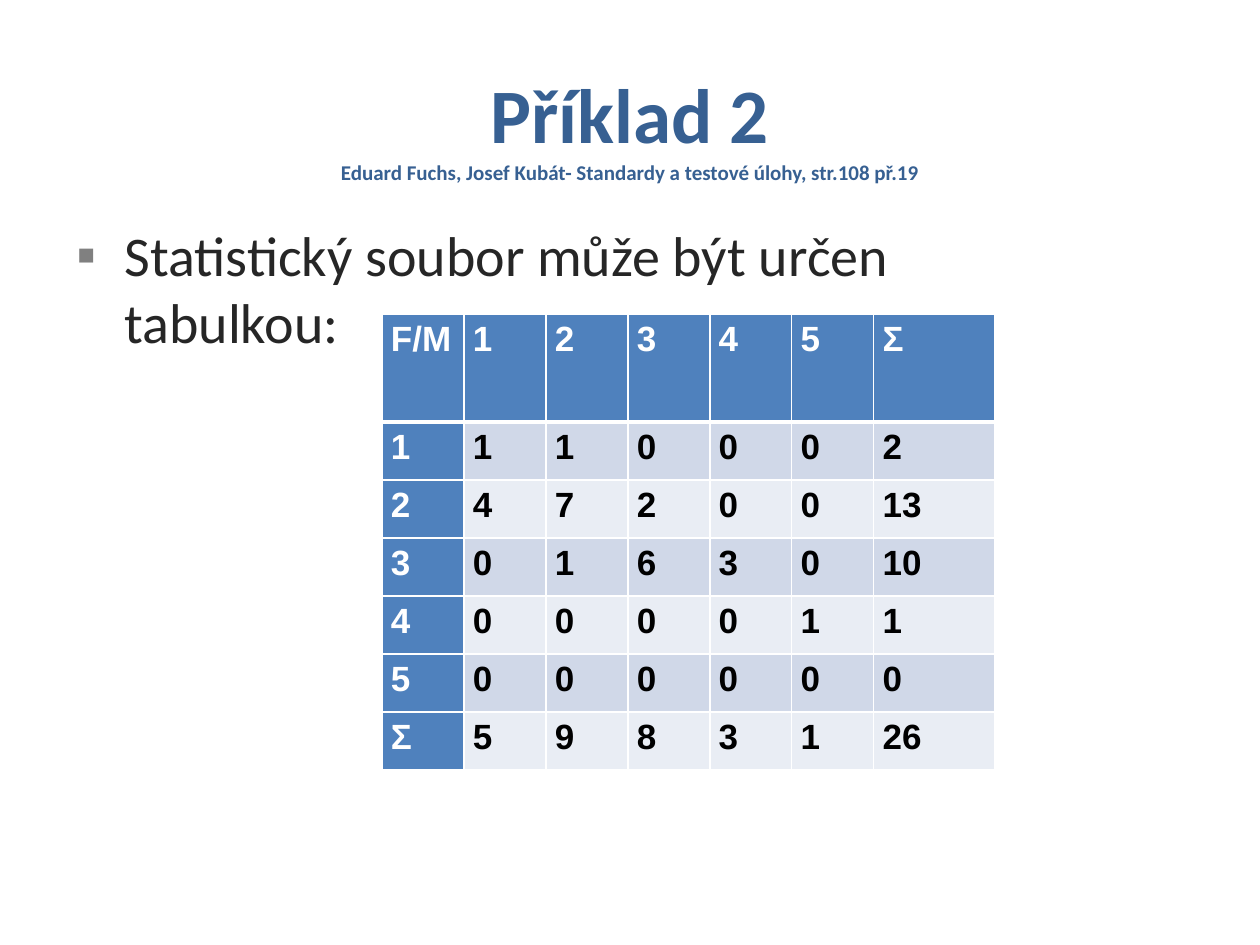
from lxml import etree
from pptx import Presentation
from pptx import util as u
from pptx.dml.color import RGBColor
from pptx.enum import text
from pptx.oxml import ns

PX = u.Inches(1) // 126

TITLE_BLUE = RGBColor(0x37, 0x60, 0x92)
BODY_GRAY = RGBColor(0x26, 0x26, 0x26)
BULLET_GRAY = RGBColor(0x80, 0x80, 0x80)
HEADER_BLUE = RGBColor(0x4F, 0x81, 0xBD)
BANDS = RGBColor(0xD0, 0xD8, 0xE8), RGBColor(0xE9, 0xED, 0xF4)
WHITE = RGBColor(0xFF, 0xFF, 0xFF)
BLACK = RGBColor(0, 0, 0)

GRADES = ["1", "2", "3", "4", "5", "Σ"]
COUNTS = [
    [1, 1, 0, 0, 0, 2],
    [4, 7, 2, 0, 0, 13],
    [0, 1, 6, 3, 0, 10],
    [0, 0, 0, 0, 1, 1],
    [0, 0, 0, 0, 0, 0],
    [5, 9, 8, 3, 1, 26],
]


def add_element(parent, tag, **attributes):
    return etree.SubElement(parent, ns.qn(tag), attributes)


class SlideBuilder:
    text_font = "Calibri"
    table_font = "Arial"

    def __init__(self, slide):
        self.slide = slide

    def style(self, font, name, color, size=None, bold=False):
        font.name, font.bold, font.color.rgb = name, bold, color
        if size:
            font.size = u.Pt(size)

    def text_box(self, left, top, width, height, anchor):
        box = self.slide.shapes.add_textbox(left * PX, top * PX, width * PX, height * PX)
        frame = box.text_frame
        frame.word_wrap = True
        frame.vertical_anchor = anchor
        return frame.paragraphs[0]

    def title(self, heading, source, *place):
        paragraph = self.text_box(*place, text.MSO_ANCHOR.MIDDLE)
        paragraph.alignment = text.PP_ALIGN.CENTER
        self.style(paragraph.font, self.text_font, TITLE_BLUE, bold=True)
        for index, (line, size) in enumerate([(heading, 44), (source, 12)]):
            if index:
                paragraph.add_line_break()
            run = paragraph.add_run()
            run.text = line
            run.font.size = u.Pt(size)

    def bullet(self, content, *place, indent=48):
        paragraph = self.text_box(*place, text.MSO_ANCHOR.TOP)
        paragraph.text = content
        properties = paragraph._p.get_or_add_pPr()
        properties.set("marL", str(indent * PX))
        properties.set("indent", str(-indent * PX))
        color = add_element(properties, "a:buClr")
        add_element(color, "a:srgbClr", val=str(BULLET_GRAY))
        add_element(properties, "a:buFont", typeface="Arial")
        add_element(properties, "a:buChar", char="▪")
        self.style(paragraph.font, self.text_font, BODY_GRAY, 32)

    def borders(self, cell, top, bottom):
        properties = cell._tc.get_or_add_tcPr()
        for side, points in zip("LRTB", (1, 1, top, bottom)):
            line = add_element(properties, f"a:ln{side}", w=str(u.Pt(points)))
            fill = add_element(line, "a:solidFill")
            add_element(fill, "a:srgbClr", val=str(WHITE))

    def cell(self, cell, content, fill, color, top, bottom):
        self.borders(cell, top, bottom)
        cell.fill.solid()
        cell.fill.fore_color.rgb = fill
        cell.margin_left = cell.margin_right = 9 * PX
        cell.margin_top = cell.margin_bottom = 0
        paragraph = cell.text_frame.paragraphs[0]
        paragraph.text = str(content)
        paragraph.line_spacing = 1.15
        self.style(paragraph.font, self.table_font, color, 20, bold=True)

    def table(self, rows, left, top, widths, heights):
        table = self.slide.shapes.add_table(
            len(heights), len(widths), left * PX, top * PX,
            sum(widths) * PX, sum(heights) * PX).table
        table.first_col = True
        for column, width in zip(table.columns, widths):
            column.width = width * PX
        for r, (values, height) in enumerate(zip(rows, heights)):
            table.rows[r].height = height * PX
            for c, value in enumerate(values):
                heading = r == 0 or c == 0
                self.cell(
                    table.cell(r, c), value,
                    HEADER_BLUE if heading else BANDS[(r - 1) % 2],
                    WHITE if heading else BLACK,
                    top=3 if r == 1 else 1, bottom=3 if r == 0 else 1)


def main():
    presentation = Presentation()
    presentation.slide_width = 1260 * PX
    presentation.slide_height = 945 * PX
    builder = SlideBuilder(presentation.slides.add_slide(presentation.slide_layouts[6]))

    # Title with its source
    builder.title("Příklad 2",
                  "Eduard Fuchs, Josef Kubát- Standardy a testové úlohy, str.108 př.19",
                  63, 47, 1134, 157)

    # Introductory sentence
    builder.bullet("Statistický soubor může být určen\vtabulkou:", 64, 214, 1134, 659)

    # Frequency table
    rows = [["F/M"] + GRADES]
    rows += [[grade] + counts for grade, counts in zip(GRADES, COUNTS)]
    builder.table(rows, 382, 314, [82] * 6 + [121], [108] + [58] * 6)

    presentation.save("out.pptx")


if __name__ == "__main__":
    main()
